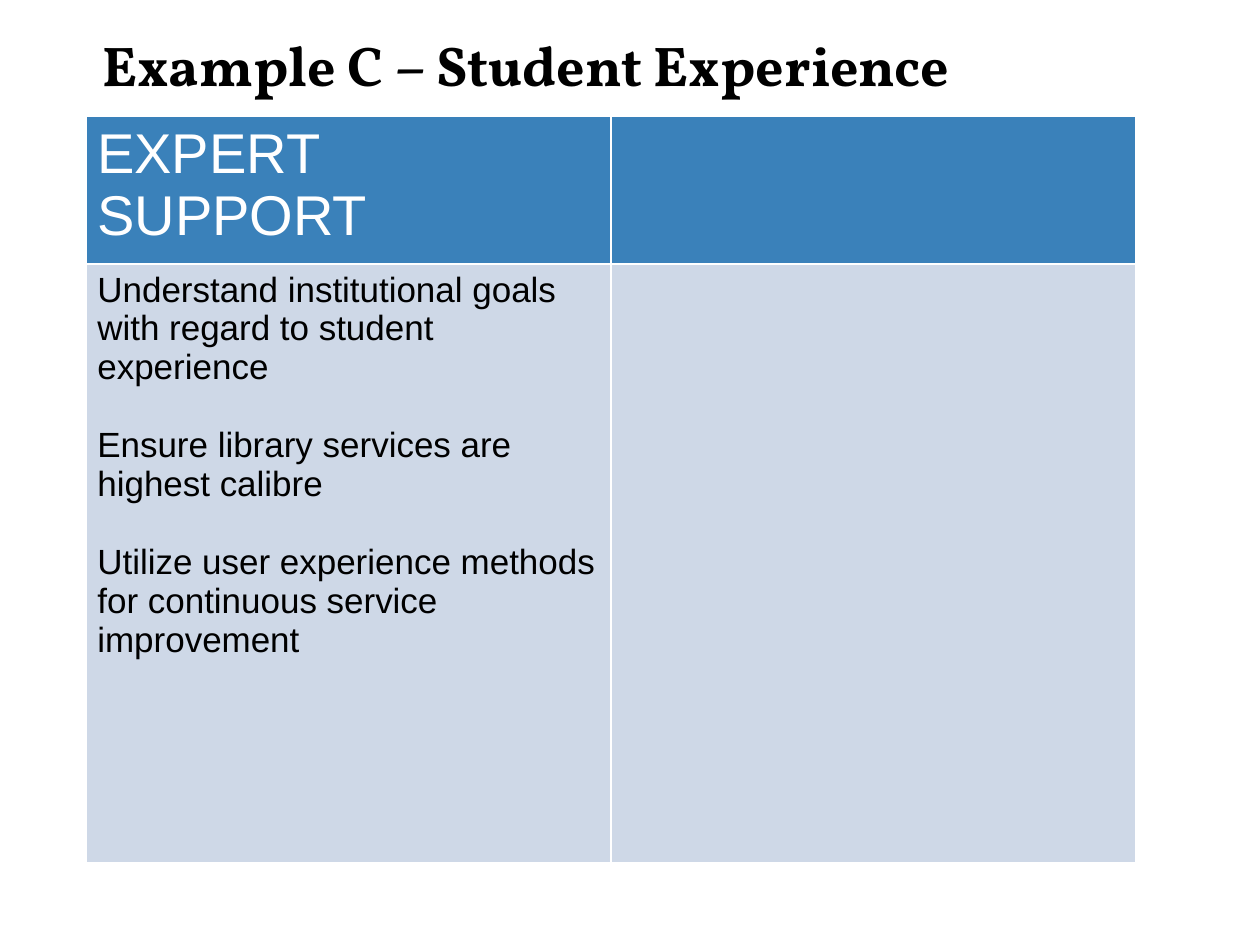
"""Builds the student experience slide with its expert support table."""
from lxml import etree
from pptx import Presentation
from pptx.dml.color import RGBColor
from pptx.enum import text
from pptx.oxml import ns
from pptx.util import Inches, Pt

TITLE = "Example C – Student Experience"
HEAD = ["EXPERT SUPPORT"]
GOALS = [
    "Understand institutional goals with regard to student experience",
    "Ensure library services are highest calibre",
    "Utilize user experience methods for continuous service improvement",
]
HEX = {"ink": "000000", "white": "FFFFFF", "head": "3A81BA", "body": "CED8E7"}
ROWS = [
    {"cells": [HEAD, []], "high": 0.88, "size": 24, "ink": "white", "fill": "head"},
    {"cells": [GOALS, []], "high": 3.57, "size": 15, "ink": "ink", "fill": "body"},
]
PAGE = Inches(7.5)
LEFT, WIDE, TOP = 0.51, 6.25, 0.69
GAP = 16.7


def color(name):
    return RGBColor.from_string(HEX[name])


def write(para, words, font, size, ink, bold=False):
    run = para.add_run()
    run.text = words
    run.font.name, run.font.size, run.font.bold = font, Pt(size), bold
    run.font.color.rgb = color(ink)


def border(cell):
    props = cell._tc.get_or_add_tcPr()
    for side in ("lnL", "lnR", "lnT", "lnB"):
        line = etree.SubElement(props, ns.qn("a:" + side), w=str(Pt(1)))
        fill = etree.SubElement(line, ns.qn("a:solidFill"))
        etree.SubElement(fill, ns.qn("a:srgbClr"), val=HEX["white"])


def fill_cell(cell, lines, row):
    border(cell)
    cell.fill.solid()
    cell.fill.fore_color.rgb = color(row["fill"])
    cell.margin_left = cell.margin_right = Inches(0.07)
    cell.margin_top = cell.margin_bottom = Inches(0.04)
    frame = cell.text_frame
    for i, words in enumerate(lines):
        para = frame.add_paragraph() if i else frame.paragraphs[0]
        para.space_before = Pt(GAP if i else 0)
        write(para, words, "Arial", row["size"], row["ink"])


def add_title(slide):
    box = slide.shapes.add_textbox(Inches(LEFT), Inches(0.07), Inches(WIDE), Inches(0.62))
    frame = box.text_frame
    frame.word_wrap = True
    frame.vertical_anchor = text.MSO_ANCHOR.MIDDLE
    frame.margin_left = frame.margin_right = Inches(0.1)
    frame.margin_top = frame.margin_bottom = Inches(0.1)
    write(frame.paragraphs[0], TITLE, "Vollkorn", 24, "ink", True)


def add_grid(slide):
    cols = len(ROWS[0]["cells"])
    high = sum(row["high"] for row in ROWS)
    grid = slide.shapes.add_table(
        len(ROWS), cols, Inches(LEFT), Inches(TOP), Inches(WIDE), Inches(high)).table
    grid.horz_banding = False
    for col in grid.columns:
        col.width = Inches(WIDE / cols)
    for r, row in enumerate(ROWS):
        grid.rows[r].height = Inches(row["high"])
        for c, lines in enumerate(row["cells"]):
            fill_cell(grid.cell(r, c), lines, row)


def main():
    deck = Presentation()
    deck.slide_width, deck.slide_height = PAGE, PAGE * 3 // 4
    slide = deck.slides.add_slide(deck.slide_layouts[6])
    add_title(slide)
    add_grid(slide)
    deck.save("out.pptx")


if __name__ == "__main__":
    main()
